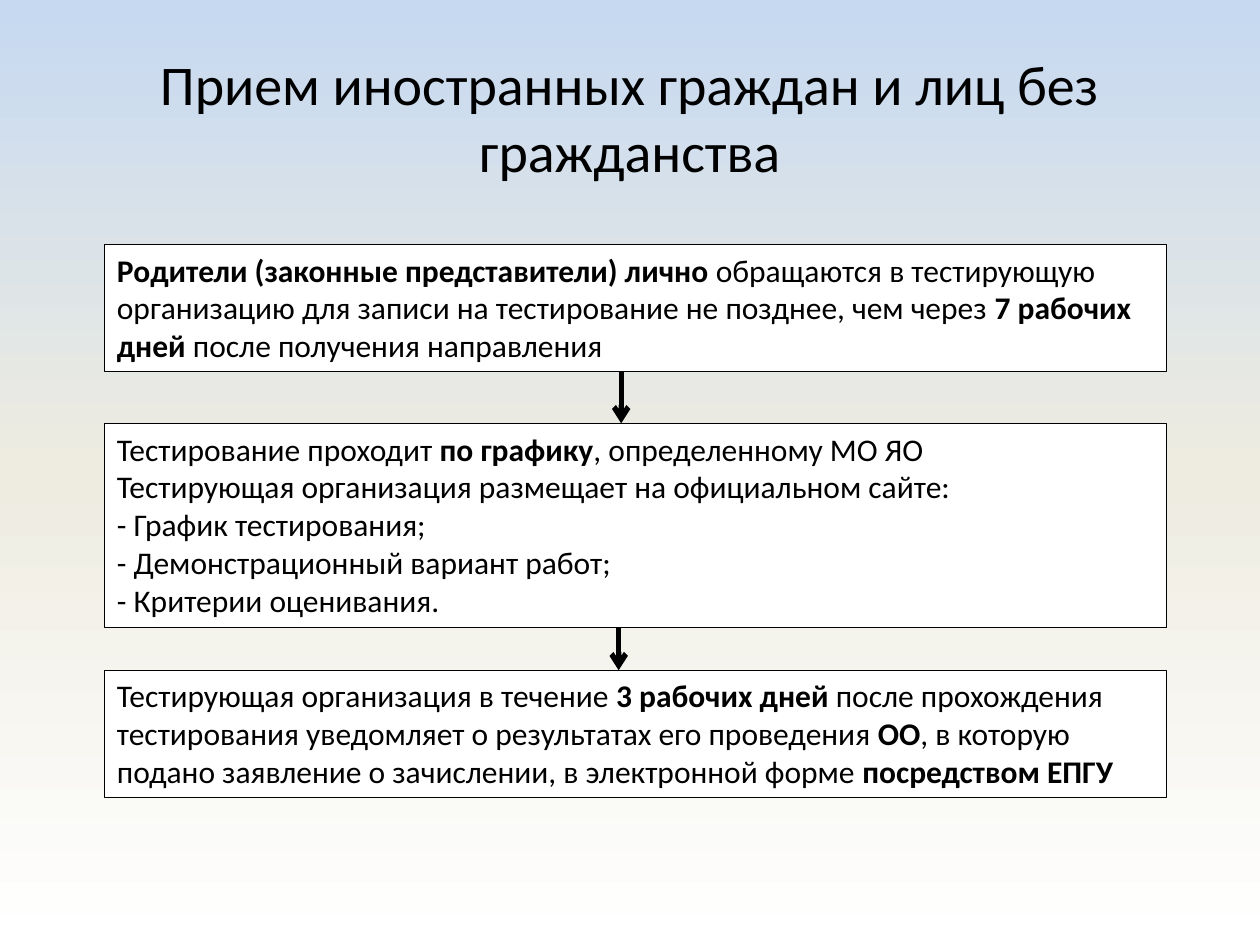
from copy import deepcopy
from pptx import Presentation
from pptx.dml.color import RGBColor as Rgb
from pptx.enum.shapes import MSO_CONNECTOR as Conn, MSO_SHAPE as Shape
from pptx.enum.text import MSO_ANCHOR as Anchor, MSO_AUTO_SIZE as Fit, PP_ALIGN as Align
from pptx.oxml.ns import qn
from pptx.oxml.xmlchemy import OxmlElement as Node
from pptx.util import Inches, Pt

WIDE, HIGH = 10, 7.5
HUES = {"sky": "C6D9F1", "sand": "EEECE1", "white": "FFFFFF", "ink": "000000"}
FONT = "Calibri"

# Boxes as columns and rows, 100 of each to the slide
HEAD = (5, 4, 90, 16.67)
LEFT, SPAN = 8.3, 84.3

# Each step: top row, height in rows, paragraphs of (text, bold) runs
STEPS = [
    (25.87, 13.47, [[
        ("Родители (законные представители) лично ", True),
        ("обращаются в тестирующую организацию для записи "
         "на тестирование не позднее, чем через ", False),
        ("7 рабочих дней ", True),
        ("после получения направления", False)]]),
    (44.8, 21.6, [
        [("Тестирование проходит ", False), ("по графику", True),
         (", определенному МО ЯО", False)],
        [("Тестирующая организация размещает на официальном сайте:", False)],
        [("- График тестирования;", False)],
        [("- Демонстрационный вариант работ;", False)],
        [("- Критерии оценивания.", False)]]),
    (70.93, 13.47, [[
        ("Тестирующая организация в течение ", False),
        ("3 рабочих дней ", True),
        ("после прохождения тестирования уведомляет "
         "о результатах его проведения ", False),
        ("ОО", True),
        (", в которую подано заявление о зачислении, "
         "в электронной форме ", False),
        ("посредством ЕПГУ", True)]]),
]
ARROWS = [49.3, 49.1]  # column of the arrow below each step


def hue(name):
    return Rgb.from_string(HUES[name])


def place(*box):
    """Turn columns and rows into lengths, in x, y order."""
    return [Inches(n * (HIGH if i % 2 else WIDE) / 100)
            for i, n in enumerate(box)]


def write(frame, paras, size, align):
    frame.word_wrap = True
    for i, runs in enumerate(paras):
        para = frame.paragraphs[0] if i == 0 else frame.add_paragraph()
        para.alignment = align
        for text, bold in runs:
            run = para.add_run()
            run.text = text
            run.font.name, run.font.size = FONT, Pt(size)
            run.font.bold = bold
            run.font.color.rgb = hue("ink")


def paint(slide):
    fill = slide.background.fill
    fill.gradient()
    fill.gradient_angle = 270
    # Add a third stop to the two that come with a gradient
    stops = next(slide.element.iter(qn("a:gsLst")))
    stops.append(deepcopy(stops[0]))
    tones = ("sky", "sand", "white")
    for stop, tone, pos in zip(fill.gradient_stops, tones, (0, 0.5, 1)):
        stop.color.rgb = hue(tone)
        stop.position = pos


def title(slide, box):
    frame = slide.shapes.add_textbox(*place(*box)).text_frame
    frame.vertical_anchor = Anchor.MIDDLE
    text = "Прием иностранных граждан и лиц без гражданства"
    write(frame, [[(text, False)]], 32, Align.CENTER)


def step(slide, box, paras):
    card = slide.shapes.add_shape(Shape.RECTANGLE, *place(*box))
    card.shadow.inherit = False
    card.fill.solid()
    card.fill.fore_color.rgb = hue("white")
    card.line.color.rgb = hue("ink")
    card.line.width = Pt(0.75)
    frame = card.text_frame
    frame.vertical_anchor = Anchor.TOP
    frame.auto_size = Fit.SHAPE_TO_FIT_TEXT
    write(frame, paras, 18, Align.LEFT)


def arrow(slide, col, top, end):
    link = slide.shapes.add_connector(
        Conn.STRAIGHT, *place(col, top, col, end))
    link.line.color.rgb = hue("ink")
    link.line.width = Pt(3)
    tip = Node("a:tailEnd")
    tip.set("type", "arrow")
    link.line._get_or_add_ln().append(tip)
    link._element.spPr.append(Node("a:effectLst"))


def flow(slide, left, span):
    for top, tall, paras in STEPS:
        step(slide, (left, top, span, tall), paras)
    # Arrows from the foot of each step to the top of the next
    for col, one, two in zip(ARROWS, STEPS, STEPS[1:]):
        arrow(slide, col, one[0] + one[1], two[0])


def main():
    deck = Presentation()
    deck.slide_width, deck.slide_height = Inches(WIDE), Inches(HIGH)
    slide = deck.slides.add_slide(deck.slide_layouts[6])
    paint(slide)
    title(slide, HEAD)
    flow(slide, LEFT, SPAN)
    deck.save("out.pptx")


if __name__ == "__main__":
    main()
